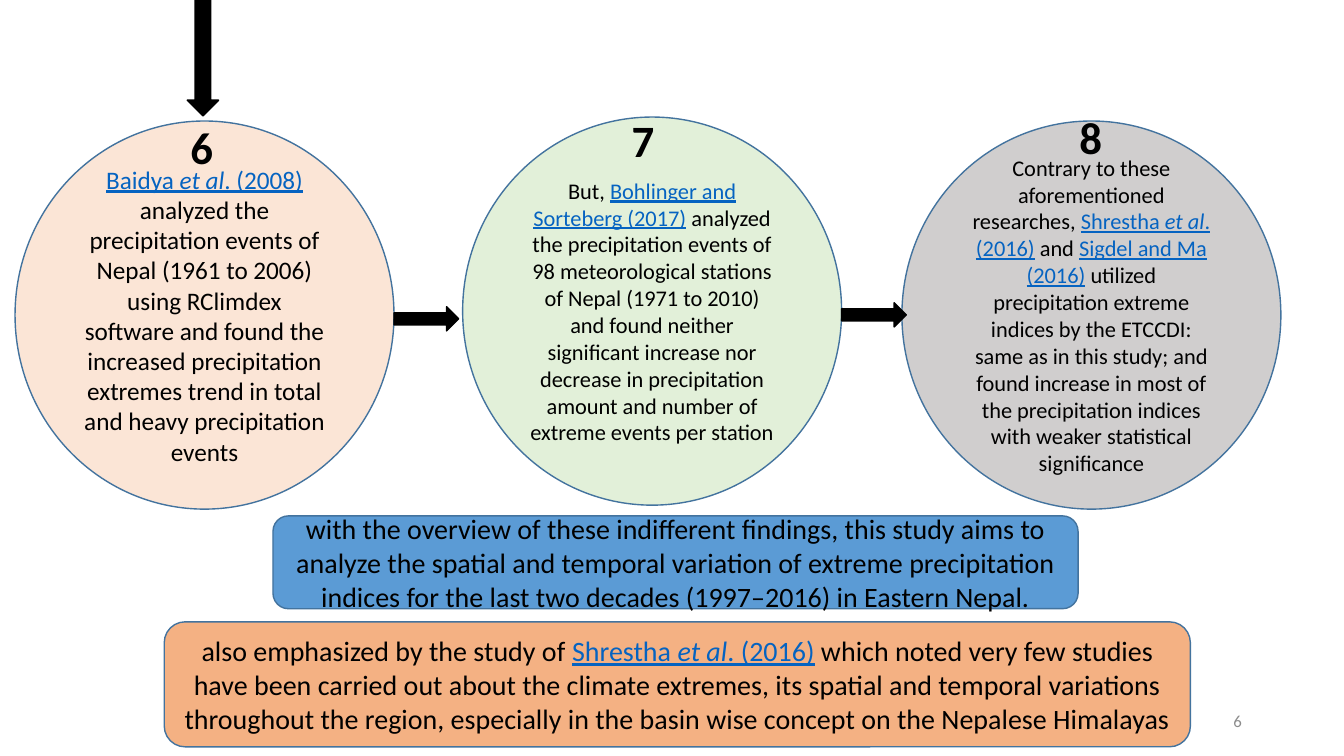
"""Build the literature overview slide with three study circles and two conclusions."""
from pptx import Presentation
from pptx.dml.color import RGBColor
from pptx.enum.shapes import MSO_SHAPE as Shape
from pptx.enum.text import MSO_ANCHOR as Anchor, PP_ALIGN as Align
from pptx.util import Cm, Pt

COLORS = {
    "text": "000000", "link": "0563C1", "number": "8C8C8C", "outline": "43739E",
    "arrow": "000000", "peach": "FBE5D6", "green": "E2F0D9", "grey": "D0CECE",
    "blue": "5B9BD5", "orange": "F4B183",
}
SHRESTHA = [("Shrestha ", "link"), ("et al", "link italic"), (". (2016)", "link")]

STUDIES = [
    {"number": "6", "number_at": (4.55, 2.9), "at": (0.38, 3.05), "fill": "peach", "size": 18, "runs": [
        ("Baidya ", "link"), ("et al", "link italic"), (". (2008)", "link"),
        (" analyzed the precipitation events of Nepal (1961 to 2006) using RClimdex software "
         "and found the increased precipitation extremes trend in total and heavy "
         "precipitation events", "")]},
    {"number": "7", "number_at": (15.67, 2.72), "at": (11.66, 2.95), "fill": "green", "size": 16, "runs": [
        ("But, ", ""), ("Bohlinger and Sorteberg (2017)", "link"),
        (" analyzed the precipitation events of 98 meteorological stations of Nepal "
         "(1971 to 2010) and found neither significant increase nor decrease in precipitation "
         "amount and number of extreme events per station", "")]},
    {"number": "8", "number_at": (26.95, 2.64), "at": (22.73, 3.05), "fill": "grey", "size": 16, "runs": [
        ("Contrary to these aforementioned researches, ", ""), *SHRESTHA, (" and ", ""),
        ("Sigdel and Ma (2016)", "link"),
        (" utilized precipitation extreme indices by the ETCCDI: same as in this study; and "
         "found increase in most of the precipitation indices with weaker statistical "
         "significance", "")]},
]
CONCLUSIONS = [
    {"at": (6.88, 13, 20.29, 2.34), "fill": "blue", "runs": [
        ("with the overview of these indifferent findings, this study aims to analyze the "
         "spatial and temporal variation of extreme precipitation indices for the last two "
         "decades (1997–2016) in Eastern Nepal.", "")]},
    {"at": (4.14, 15.67, 25.86, 3.15), "fill": "orange", "runs": [
        ("also emphasized by the study of ", ""), *SHRESTHA,
        (" which noted very few studies have been carried out about the climate extremes, its "
         "spatial and temporal variations throughout the region, especially in the basin wise "
         "concept on the Nepalese Himalayas", "")]},
]
CIRCLE = (9.55, 9.78)
NUMBER_BOX = (1.09, 1.63)
DOWN_ARROW = (4.72, 0, 0.79, 2.92)
ARROW = (1.63, 0.61)
ARROW_DROP = 4.68
PAGE_NUMBER = ("6", (23.93, 17.65, 7.62, 1.02))


def rgb(name):
    return RGBColor.from_string(COLORS[name])


def write(sp, runs, size=20, color="text", bold=False, align=Align.CENTER,
          anchor=Anchor.MIDDLE, wrap=True):
    """Put styled runs into a shape."""
    tf = sp.text_frame
    tf.word_wrap = wrap
    tf.vertical_anchor = anchor
    p = tf.paragraphs[0]
    p.alignment = align
    for text, style in runs:
        r = p.add_run()
        r.text = text
        font = r.font
        font.name, font.size, font.bold = "Calibri", Pt(size), bold
        font.italic = "italic" in style
        font.underline = "link" in style
        font.color.rgb = rgb("link" if "link" in style else color)


def add_shape(s, kind, at, fill, line="outline"):
    sp = s.shapes.add_shape(kind, *map(Cm, at))
    sp.shadow.inherit = False
    sp.fill.solid()
    sp.fill.fore_color.rgb = rgb(fill)
    sp.line.color.rgb = rgb(line)
    sp.line.width = Pt(1)
    return sp


def add_text(s, at, text, **fmt):
    write(s.shapes.add_textbox(*map(Cm, at)), [(text, "")], **fmt)


def main():
    prs = Presentation()
    prs.slide_width, prs.slide_height = Cm(33.87), Cm(19.05)
    s = prs.slides.add_slide(prs.slide_layouts[6])

    add_shape(s, Shape.DOWN_ARROW, DOWN_ARROW, "arrow", "arrow")
    for study in STUDIES:
        circle = add_shape(s, Shape.OVAL, study["at"] + CIRCLE, study["fill"])
        write(circle, study["runs"], size=study["size"])
        add_text(s, study["number_at"] + NUMBER_BOX, study["number"], size=32, bold=True,
                 align=Align.LEFT, anchor=Anchor.TOP, wrap=False)
    for study in STUDIES[:-1]:
        left, top = study["at"]
        at = (left + CIRCLE[0], top + ARROW_DROP) + ARROW
        add_shape(s, Shape.RIGHT_ARROW, at, "arrow", "arrow")
    for box in CONCLUSIONS:
        write(add_shape(s, Shape.ROUNDED_RECTANGLE, box["at"], box["fill"]), box["runs"])
    page, at = PAGE_NUMBER
    add_text(s, at, page, size=12, color="number", align=Align.RIGHT)

    prs.save("out.pptx")


if __name__ == "__main__":
    main()
